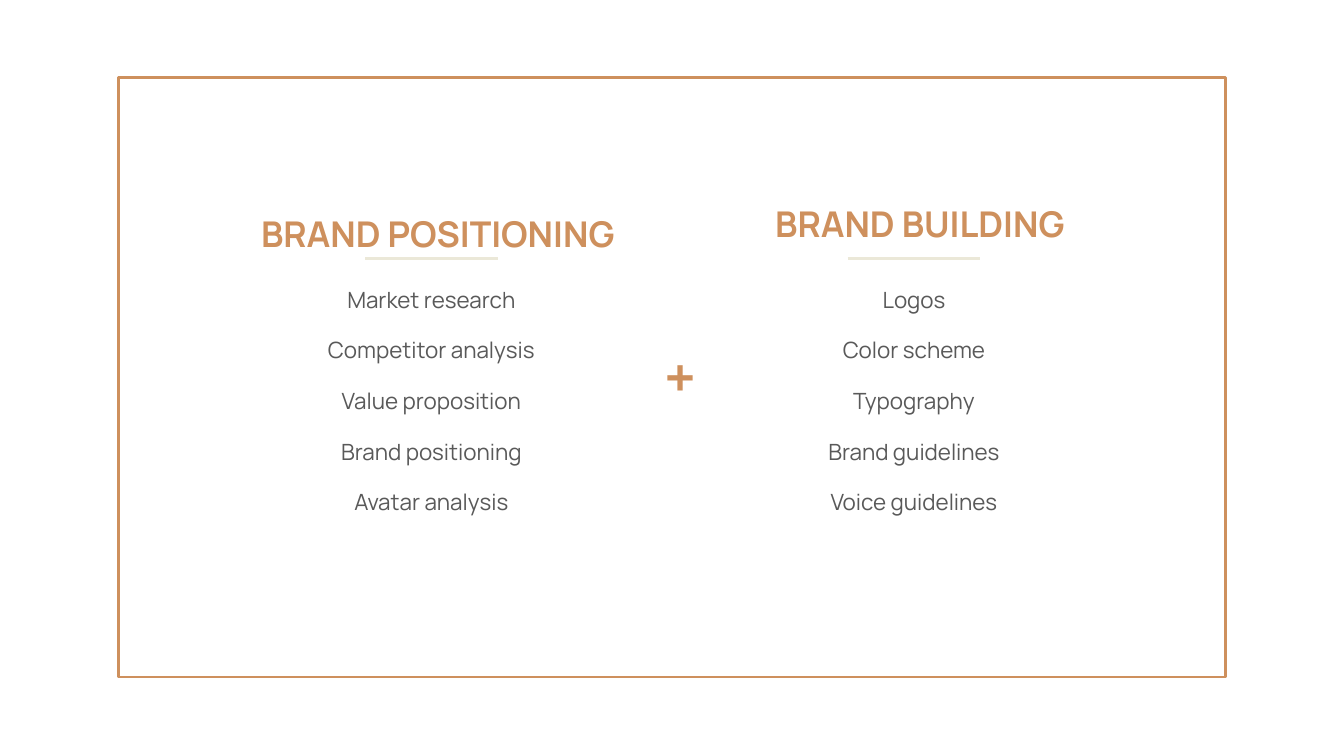
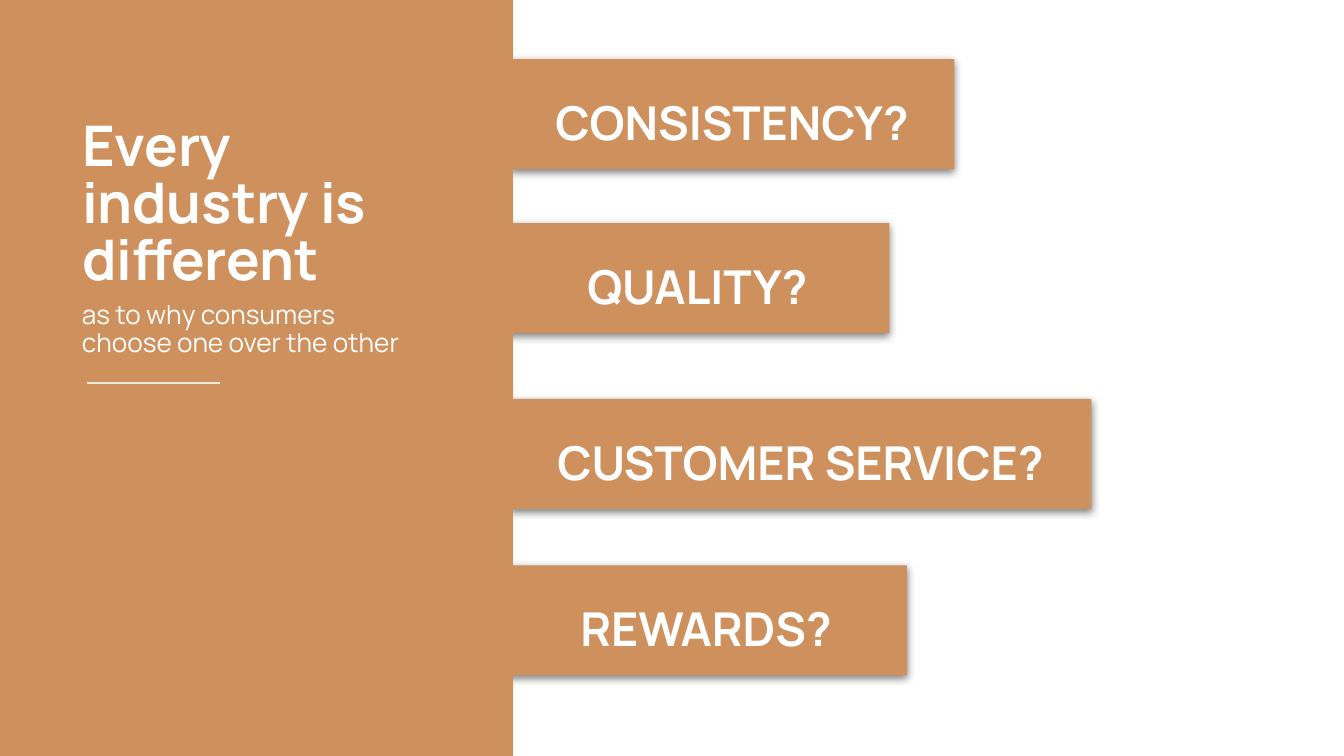
from lxml import etree
from pptx import Presentation
from pptx.dml.color import RGBColor
from pptx.enum.shapes import MSO_CONNECTOR, MSO_SHAPE
from pptx.enum.text import MSO_ANCHOR, MSO_AUTO_SIZE, PP_ALIGN
from pptx.oxml.ns import qn
from pptx.util import Cm, Pt

RECT = MSO_SHAPE.RECTANGLE
STRAIGHT = MSO_CONNECTOR.STRAIGHT
TOP = MSO_ANCHOR.TOP
LEFT, CENTER = PP_ALIGN.LEFT, PP_ALIGN.CENTER
GROW, FIXED = MSO_AUTO_SIZE.SHAPE_TO_FIT_TEXT, MSO_AUTO_SIZE.NONE

COLORS = {
    "copper": "CE905D",
    "sand": "EBE8D8",
    "text": "595959",
    "white": "FFFFFF",
    "shadow": "000000",
}
FONT = "Manrope"
WIDTH, HEIGHT = 25.4, 14.29
TITLE_ONLY, BLANK = 5, 6
RULE_WIDTH = 2.51


def rgb(name):
    return RGBColor.from_string(COLORS[name])


class Deck:
    """Holds the style and the current slide; lengths are in centimetres."""

    def __init__(self):
        self.prs = Presentation()
        self.prs.slide_width, self.prs.slide_height = Cm(WIDTH), Cm(HEIGHT)
        self.slide = None

    def new_slide(self, layout):
        self.slide = self.prs.slides.add_slide(self.prs.slide_layouts[layout])

    def rect(self, x, y, w, h, fill=None, line=None, shadow=False):
        box = self.slide.shapes.add_shape(RECT, Cm(x), Cm(y), Cm(w), Cm(h))
        box.shadow.inherit = False
        if fill:
            box.fill.solid()
            box.fill.fore_color.rgb = rgb(fill)
        else:
            box.fill.background()
        if line:
            box.line.color.rgb = rgb(line)
            box.line.width = Pt(1.5)
        else:
            box.line.fill.background()
        if shadow:
            self.drop_shadow(box)

    def drop_shadow(self, box):
        effects = box._element.spPr.find(qn("a:effectLst"))
        outer = etree.SubElement(effects, qn("a:outerShdw"), blurRad=str(Pt(4.5)),
                                 dist=str(Pt(1.5)), dir="5400000", rotWithShape="0")
        color = etree.SubElement(outer, qn("a:srgbClr"), val=COLORS["shadow"])
        etree.SubElement(color, qn("a:alpha"), val="50000")

    def rule(self, x, y):
        line = self.slide.shapes.add_connector(
            STRAIGHT, Cm(x), Cm(y), Cm(x + RULE_WIDTH), Cm(y))
        line.line.color.rgb = rgb("sand")
        line.line.width = Pt(1.5)
        etree.SubElement(line._element.spPr, qn("a:effectLst"))

    def text(self, lines, x, y, w, h, **style):
        box = self.slide.shapes.add_textbox(Cm(x), Cm(y), Cm(w), Cm(h))
        self.fill_text(box.text_frame, lines, **style)

    def title(self, words, x, y, w, h, **style):
        title = self.slide.shapes.title
        title.left, title.top, title.width, title.height = Cm(x), Cm(y), Cm(w), Cm(h)
        self.fill_text(title.text_frame, [words], **style)
        # Bring the title in front of what is already drawn
        self.slide.shapes._spTree.append(title._element)

    def fill_text(self, frame, lines, size, color, bold=False, align=CENTER,
                  spacing=1.0, before=0, after=12, fit=FIXED):
        frame.word_wrap = True
        frame.auto_size = fit
        frame.vertical_anchor = TOP
        frame.margin_left = frame.margin_right = Cm(0.25)
        frame.margin_top = frame.margin_bottom = Cm(0.25)
        for i, line in enumerate(lines):
            par = frame.paragraphs[0] if i == 0 else frame.add_paragraph()
            par.text = line
            par.alignment = align
            par.line_spacing = spacing
            par.space_before = Pt(before if i else 0)
            par.space_after = Pt(after)
            par.font.name = FONT
            par.font.size = Pt(size)
            par.font.bold = bold
            par.font.color.rgb = rgb(color)


def brand_slide(deck):
    deck.new_slide(BLANK)
    deck.rect(2.24, 1.47, 20.93, 11.33, line="copper")

    # Two columns: heading, heading left, width and spacing, list left, items
    columns = [
        ("BRAND POSITIONING", 3.4, 9.75, 1.15, 4.98,
         ["Market research", "Competitor analysis", "Value proposition",
          "Brand positioning", "Avatar analysis"]),
        ("BRAND BUILDING", 13.89, 6.99, 0.95, 14.1,
         ["Logos", "Color scheme", "Typography",
          "Brand guidelines", "Voice guidelines"]),
    ]
    list_width = 6.35
    for heading, x, width, spacing, list_x, items in columns:
        deck.text([heading], x, 3.63, width, 1.24, size=19, color="copper",
                  bold=True, spacing=spacing)
        deck.text(items, list_x, 5.13, list_width, 5.11, size=12, color="text",
                  spacing=1.05, before=12, after=0)
        deck.rule(list_x + (list_width - RULE_WIDTH) / 2, 4.88)

    # Plus sign between the columns
    deck.text(["+"], 11.61, 6.32, 2.49, 1.24, size=30, color="copper",
              bold=True, spacing=0.95)


def industry_slide(deck):
    deck.new_slide(TITLE_ONLY)

    # Bars that come out from behind the panel, each with a centred label
    bars = [
        ("CONSISTENCY?", 9.63, 1.12, 8.41, 7.59),
        ("QUALITY?", 9.55, 4.22, 7.26, 6.71),
        ("CUSTOMER SERVICE?", 9.63, 7.54, 11, 10.29),
        ("REWARDS?", 9.55, 10.69, 7.59, 5.41),
    ]
    for reason, x, y, width, label_width in bars:
        deck.rect(x, y, width, 2.08, fill="copper", shadow=True)
        deck.text([reason], x + (width - label_width) / 2, y + 0.25, label_width, 1.57,
                  size=25, color="white", bold=True, spacing=1.15, fit=GROW)

    # Left panel with title and subtitle
    deck.rect(0, 0, 9.7, HEIGHT, fill="copper")
    deck.title("Every industry is different", 1.3, 2.03, 6.38, 3.78, size=30,
               color="white", bold=True, align=LEFT, spacing=0.85, fit=GROW)
    deck.text(["as to why consumers choose one over the other"], 1.3, 5.46, 7.09, 1.6,
              size=14, color="white", align=LEFT, spacing=0.9, fit=GROW)
    deck.rule(1.65, 7.24)


def main():
    deck = Deck()
    brand_slide(deck)
    industry_slide(deck)
    deck.prs.save("out.pptx")


if __name__ == "__main__":
    main()
